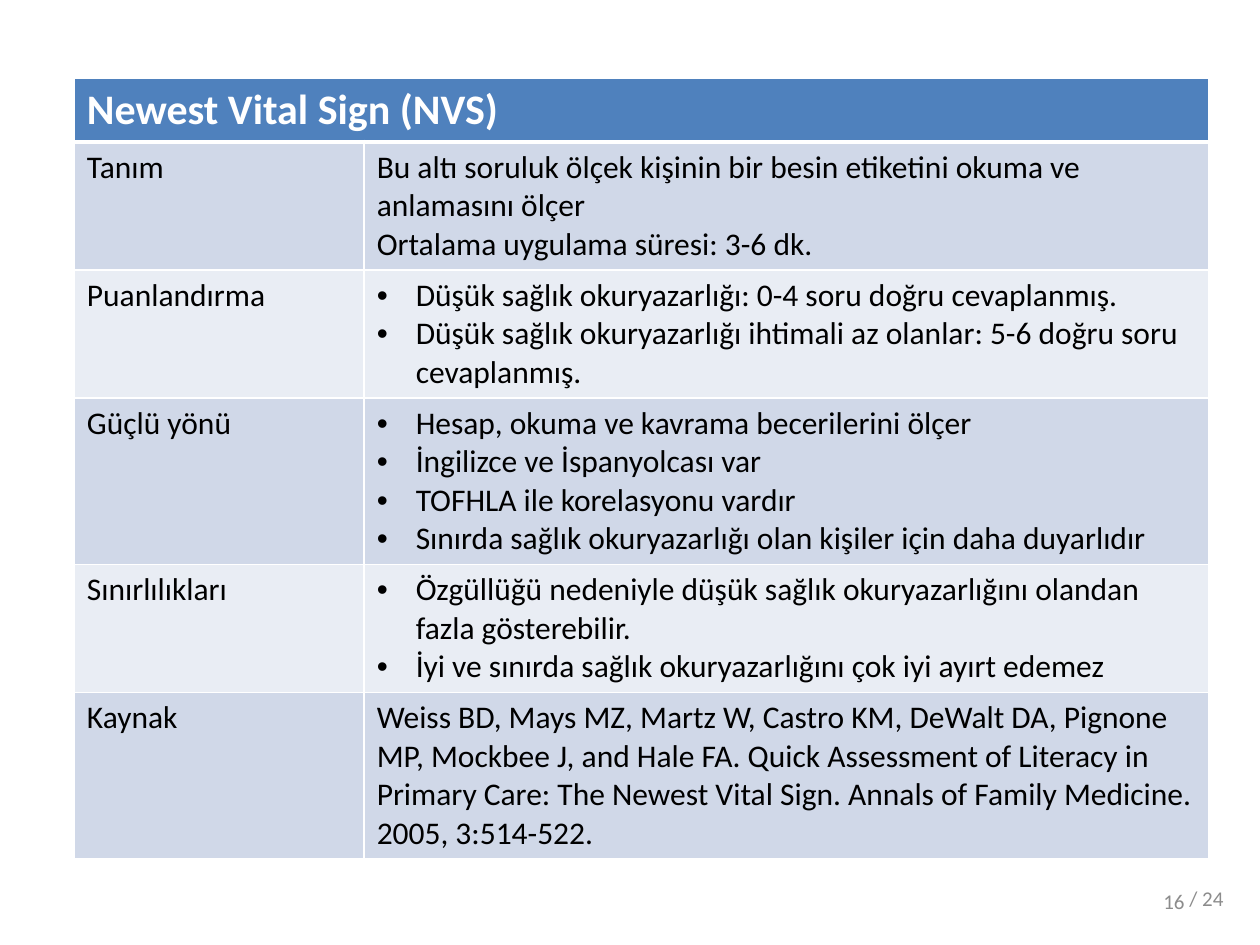
from lxml.etree import SubElement
from pptx import Presentation
from pptx.dml.color import RGBColor as RGB
from pptx.enum.text import MSO_ANCHOR as Anchor, PP_ALIGN as Align
from pptx.oxml.ns import qn
from pptx.util import Inches, Pt

WHITE = RGB(0xFF, 0xFF, 0xFF)
BLACK = RGB(0, 0, 0)
GREY = RGB(0x8C, 0x8C, 0x8C)
BLUE = RGB(0x4F, 0x81, 0xBD)
BANDS = RGB(0xD0, 0xD8, 0xE8), RGB(0xE9, 0xED, 0xF4)
FONT = "Calibri"
WIDE, HIGH = Inches(10), Inches(7.5)
COLS = 0.23, 0.67
LINE = 0.305
PAD = 0.1
TITLE = "Newest Vital Sign (NVS)"
ROWS = [
    ("Tanım", 3, False, [
        "Bu altı soruluk ölçek kişinin bir besin etiketini okuma ve anlamasını ölçer",
        "Ortalama uygulama süresi: 3-6 dk."]),
    ("Puanlandırma", 3, True, [
        "Düşük sağlık okuryazarlığı: 0-4 soru doğru cevaplanmış.",
        "Düşük sağlık okuryazarlığı ihtimali az olanlar: 5-6 doğru soru cevaplanmış."]),
    ("Güçlü yönü", 4, True, [
        "Hesap, okuma ve kavrama becerilerini ölçer",
        "İngilizce ve İspanyolcası var",
        "TOFHLA ile korelasyonu vardır",
        "Sınırda sağlık okuryazarlığı olan kişiler için daha duyarlıdır"]),
    ("Sınırlılıkları", 3, True, [
        "Özgüllüğü nedeniyle düşük sağlık okuryazarlığını olandan fazla gösterebilir.",
        "İyi ve sınırda sağlık okuryazarlığını çok iyi ayırt edemez"]),
    ("Kaynak", 4, False, [
        "Weiss BD, Mays MZ, Martz W, Castro KM, DeWalt DA, Pignone MP, Mockbee J, "
        "and Hale FA. Quick Assessment of Literacy in Primary Care: The Newest Vital "
        "Sign. Annals of Family Medicine. 2005, 3:514-522."]),
]


def style(frame, size, color, bold=False):
    for para in frame.paragraphs:
        for run in para.runs:
            font = run.font
            font.name, font.size, font.bold = FONT, Pt(size), bold
            font.color.rgb = color


def edge(cell, top, base):
    props = cell._tc.get_or_add_tcPr()
    for side, width in zip("LRTB", (1, 1, top, base)):
        line = SubElement(props, qn(f"a:ln{side}"), w=str(Pt(width)))
        fill = SubElement(line, qn("a:solidFill"))
        SubElement(fill, qn("a:srgbClr"), val=str(WHITE))


def bullet(para):
    props = para._p.get_or_add_pPr()
    props.set("marL", str(Inches(0.31)))
    props.set("indent", str(-Inches(0.31)))
    SubElement(props, qn("a:buFont"), typeface="Arial")
    SubElement(props, qn("a:buChar"), char="•")


def paint(cell, text, fill, size=18, color=BLACK, bold=False, top=1, base=1):
    edge(cell, top, base)
    cell.fill.solid()
    cell.fill.fore_color.rgb = fill
    cell.text_frame.text = text
    style(cell.text_frame, size, color, bold)


def add_grid(slide):
    frame = slide.shapes.add_table(
        len(ROWS) + 1, 2, Inches(0.59), Inches(0.62), int(WIDE * 0.9), int(HIGH * 0.82))
    table = frame.table
    for col, share in zip(table.columns, COLS):
        col.width = int(WIDE * share)
    table.rows[0].height = Inches(0.49)
    head = table.cell(0, 0)
    head.merge(table.cell(0, 1))
    for cell, text in zip(table.rows[0].cells, (TITLE, "")):
        paint(cell, text, BLUE, 24, WHITE, True, base=3)
    for num, (name, lines, dots, texts) in enumerate(ROWS, 1):
        table.rows[num].height = Inches(PAD + LINE * lines)
        fill = BANDS[(num - 1) % 2]
        top = 3 if num == 1 else 1
        left, right = table.rows[num].cells
        paint(left, name, fill, top=top)
        paint(right, "\n".join(texts), fill, top=top)
        if dots:
            for para in right.text_frame.paragraphs:
                bullet(para)


def add_note(slide, text, left, top, width, height, align):
    box = slide.shapes.add_textbox(
        int(WIDE * left), int(HIGH * top), int(WIDE * width), int(HIGH * height))
    frame = box.text_frame
    frame.word_wrap = True
    frame.vertical_anchor = Anchor.MIDDLE
    frame.text = text
    frame.paragraphs[0].alignment = align
    style(frame, 12, GREY)


def main():
    deck = Presentation()
    deck.slide_width, deck.slide_height = WIDE, HIGH
    slide = deck.slides.add_slide(deck.slide_layouts[6])
    add_grid(slide)
    add_note(slide, "/ 24", 0.925, 0.92, 0.065, 0.06, Align.CENTER)
    add_note(slide, "16", 0.717, 0.927, 0.233, 0.053, Align.RIGHT)
    deck.save("out.pptx")


if __name__ == "__main__":
    main()
